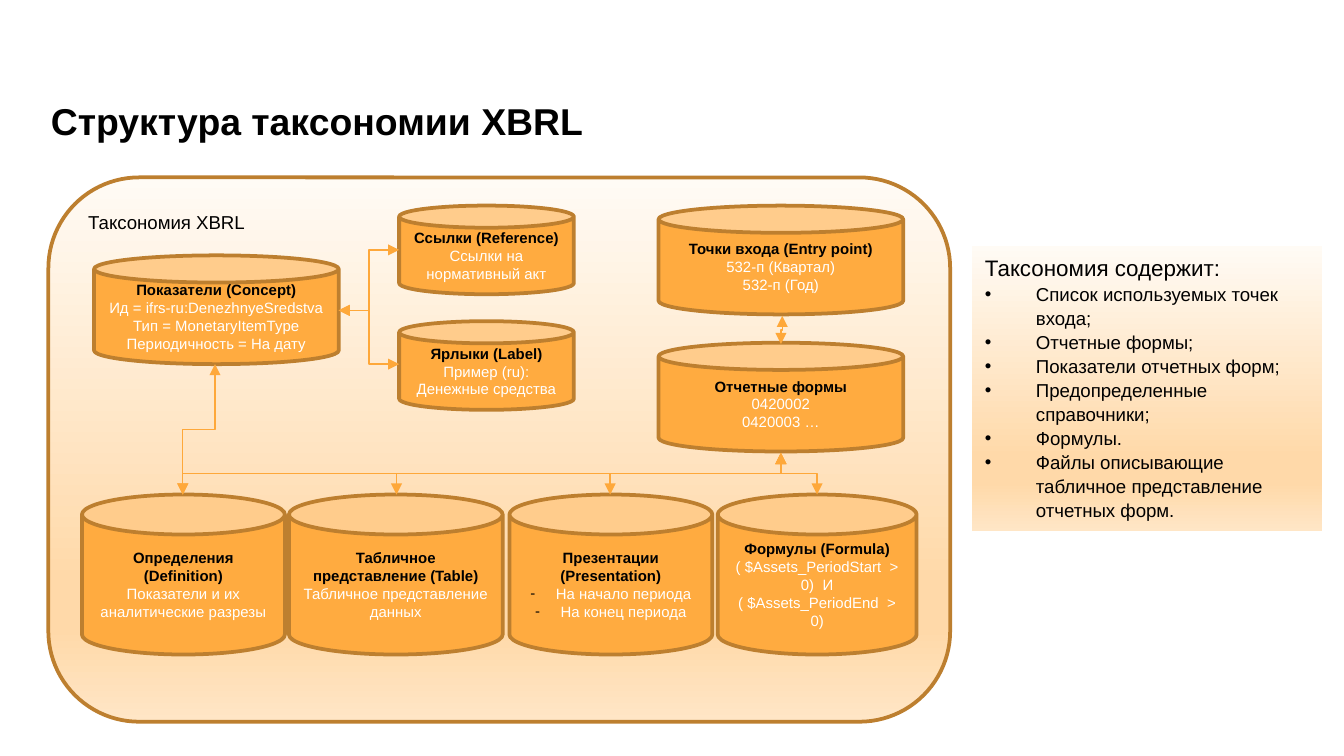
from dataclasses import dataclass

from lxml import etree
from pptx import Presentation
from pptx.dml.color import RGBColor
from pptx.enum import shapes, text
from pptx.oxml.ns import qn
from pptx.util import Inches, Pt


@dataclass(frozen=True)
class Theme:
    font: str = "Arial"
    dark: str = "000000"
    light: str = "FFFFFF"
    can: str = "FFAB40"
    edge: str = "BD7F2F"
    link: str = "FEA83A"
    fade: tuple = ((0, "FFFBF5"), (74, "FFD9A9"), (83, "FFD9A9"), (100, "FFE6C6"))
    title: int = 20
    head: int = 12
    body: int = 10
    small: int = 8


THEME = Theme()
LEFT, MID = text.PP_ALIGN.LEFT, text.PP_ALIGN.CENTER

# Left, top, width, height, heading, lines, bullet
CANS = [
    (0.7, 1.9, 1.82, 0.81, "Показатели (Concept)",
     ["Ид = ifrs-ru:DenezhnyeSredstva", "Тип = MonetaryItemType",
      "Периодичность = На дату"], None),
    (2.97, 1.53, 1.3, 0.66, "Ссылки (Reference)", ["Ссылки на нормативный акт"], None),
    (2.97, 2.39, 1.3, 0.66, "Ярлыки (Label)", ["Пример (ru): Денежные средства"], None),
    (4.9, 1.53, 1.82, 0.81, "Точки входа (Entry point)",
     ["532-п (Квартал)", "532-п (Год)"], None),
    (4.9, 2.55, 1.82, 0.81, "Отчетные формы", ["0420002", "0420003 …"], None),
    (0.61, 3.68, 1.51, 1.19, "Определения (Definition)",
     ["Показатели и их аналитические разрезы"], None),
    (2.15, 3.68, 1.59, 1.19, "Табличное представление (Table)",
     ["Табличное представление данных"], None),
    (3.79, 3.68, 1.51, 1.19, "Презентации (Presentation)",
     ["На начало периода", "На конец периода"], "-"),
    (5.34, 3.68, 1.48, 1.19, "Формулы (Formula)",
     ["( $Assets_PeriodStart  > 0)  И ( $Assets_PeriodEnd  > 0)"], None),
]

CONTENTS = [
    "Список используемых точек входа;",
    "Отчетные формы;",
    "Показатели отчетных форм;",
    "Предопределенные справочники;",
    "Формулы.",
    "Файлы описывающие табличное представление отчетных форм.",
]


def rgb(code):
    return RGBColor.from_string(code)


def bullet(para, mark, indent):
    props = para._p.get_or_add_pPr()
    props.set("marL", str(Inches(indent)))
    props.set("indent", str(-Inches(indent)))
    color = etree.SubElement(props, qn("a:buClr"))
    etree.SubElement(color, qn("a:srgbClr"), val=THEME.dark)
    etree.SubElement(props, qn("a:buFont"), typeface=THEME.font)
    etree.SubElement(props, qn("a:buChar"), char=mark)


def write(frame, words, size, color=THEME.dark, bold=False, align=LEFT,
          mark=None, indent=0, gap=None):
    """Fill the empty first paragraph, or add one after the others."""
    para = frame.paragraphs[0]
    if para.runs:
        para = frame.add_paragraph()
    if mark:
        bullet(para, mark, indent)
    para.add_run().text = words
    para.alignment = align
    para.line_spacing = gap
    para.font.name = THEME.font
    para.font.size = Pt(size)
    para.font.bold = bold
    para.font.color.rgb = rgb(color)


def block(slide, kind, box, anchor, edge=None):
    shape = slide.shapes.add_shape(kind, *map(Inches, box))
    shape.shadow.inherit = False
    if edge:
        shape.line.color.rgb = rgb(edge)
        shape.line.width = Pt(2)
    else:
        shape.line.fill.background()
    shape.text_frame.word_wrap = True
    shape.text_frame.vertical_anchor = anchor
    return shape


def fade(shape):
    """Fill from top to bottom with the theme's gradient."""
    shape.fill.gradient()
    shape.fill.gradient_angle = 270
    stops = shape._element.spPr.find(".//" + qn("a:gsLst"))
    for stop in list(stops):
        stops.remove(stop)
    for place, code in THEME.fade:
        stop = etree.SubElement(stops, qn("a:gs"), pos=str(place * 1000))
        etree.SubElement(stop, qn("a:srgbClr"), val=code)


def can(slide, box, head, lines, mark):
    shape = block(slide, shapes.MSO_SHAPE.CAN, box, text.MSO_ANCHOR.MIDDLE, THEME.edge)
    shape.fill.solid()
    shape.fill.fore_color.rgb = rgb(THEME.can)
    frame = shape.text_frame
    write(frame, head, THEME.small, bold=True, align=MID)
    for line in lines:
        write(frame, line, THEME.small, THEME.light, align=MID, mark=mark, indent=0.19)


def link(slide, start, end, upright=False):
    """Join two points by a bent double arrow; upright ones leave vertically."""
    (x1, y1), (x2, y2) = start, end
    turn = 0
    if upright:
        mid_x, mid_y = (x1 + x2) / 2, (y1 + y2) / 2
        side = 1 if x2 < x1 else -1
        turn = 90 if side > 0 else 270
        half_w, half_h = side * (y2 - y1) / 2, side * (x2 - x1) / 2
        x1, y1 = mid_x - half_w, mid_y + half_h
        x2, y2 = mid_x + half_w, mid_y - half_h
    line = slide.shapes.add_connector(
        shapes.MSO_CONNECTOR.ELBOW, *map(Inches, (x1, y1, x2, y2)))
    line.line.color.rgb = rgb(THEME.link)
    line.line.width = Pt(0.75)
    props = line._element.spPr
    if turn:
        props.find(qn("a:xfrm")).set("rot", str(turn * 60000))
    stroke = props.find(qn("a:ln"))
    for tip in ("a:headEnd", "a:tailEnd"):
        etree.SubElement(stroke, qn(tip), type="triangle")
    etree.SubElement(props, qn("a:effectLst"))


def title(slide):
    box = slide.shapes.add_textbox(*map(Inches, (0.28, 0.63, 6.8, 0.69)))
    frame = box.text_frame
    frame.word_wrap = True
    frame.margin_top = frame.margin_bottom = Inches(0.1)
    write(frame, "Структура таксономии XBRL", THEME.title, bold=True)


def frame_area(slide):
    area = block(slide, shapes.MSO_SHAPE.ROUNDED_RECTANGLE, (0.36, 1.32, 6.71, 4.05),
                 text.MSO_ANCHOR.TOP, THEME.edge)
    fade(area)
    write(area.text_frame, "Таксономия XBRL", THEME.body)


def links(slide):
    concept, forms = (2.52, 2.31), (5.81, 3.37)
    for y in (1.86, 2.71):
        link(slide, concept, (2.97, y))
    link(slide, (5.82, 2.35), (5.81, 2.56), upright=True)
    link(slide, (1.6, 2.71), (1.36, 3.68), upright=True)
    for x in (1.36, 2.95, 4.54, 6.08):
        link(slide, forms, (x, 3.68), upright=True)


def panel(slide):
    shape = block(slide, shapes.MSO_SHAPE.RECTANGLE, (7.23, 1.83, 2.61, 2.12),
                  text.MSO_ANCHOR.TOP)
    fade(shape)
    frame = shape.text_frame
    write(frame, "Таксономия содержит:", THEME.head, gap=1.07)
    for item in CONTENTS:
        write(frame, item, THEME.body, mark="•", indent=0.38, gap=1.07)


def main():
    deck = Presentation()
    deck.slide_width = Inches(10)
    deck.slide_height = Inches(10) * 9 // 16
    slide = deck.slides.add_slide(deck.slide_layouts[6])
    title(slide)
    frame_area(slide)
    for *box, head, lines, mark in CANS:
        can(slide, box, head, lines, mark)
    links(slide)
    panel(slide)
    deck.save("out.pptx")


if __name__ == "__main__":
    main()
